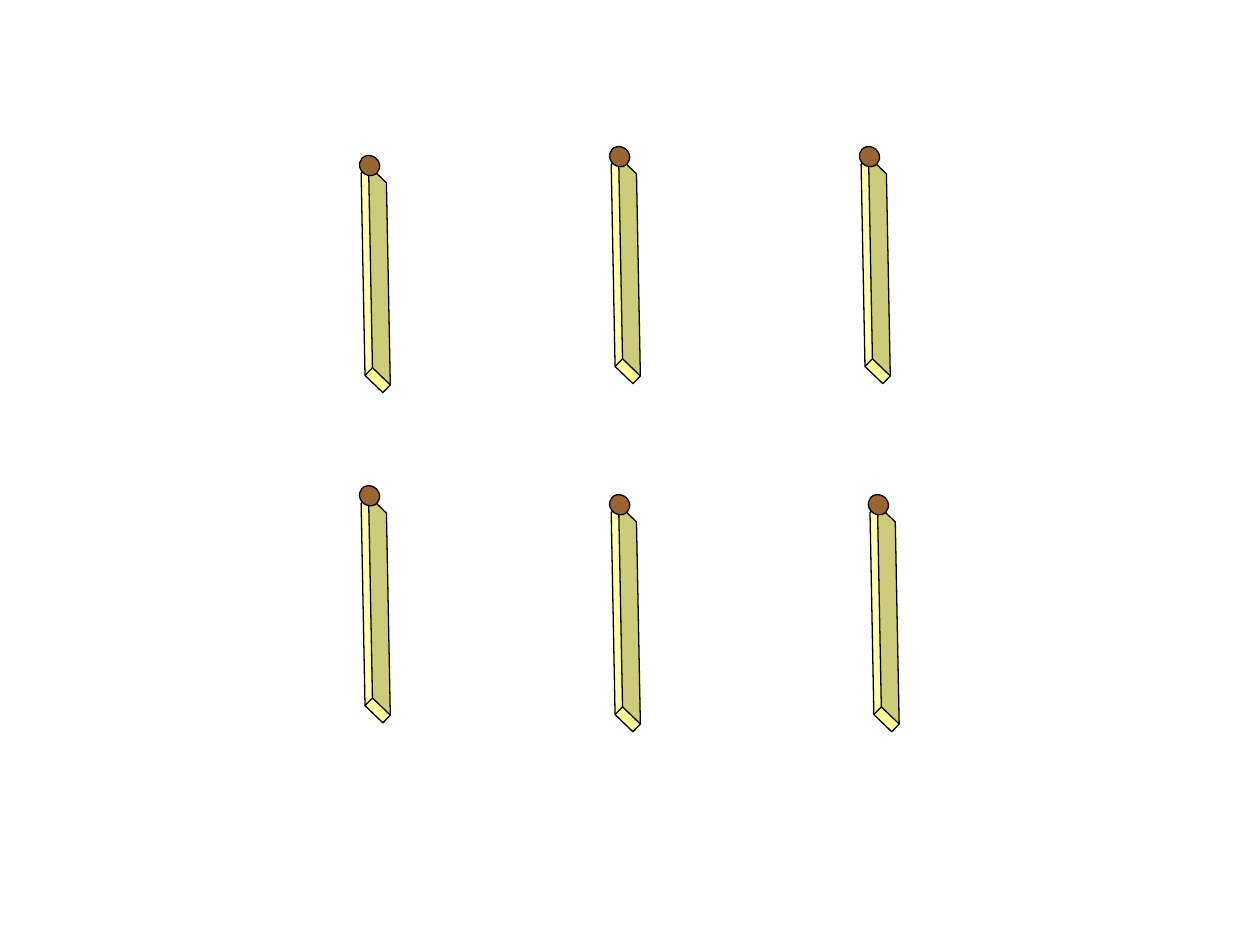
from dataclasses import dataclass

from pptx import Presentation
from pptx.dml.color import RGBColor
from pptx.enum.shapes import MSO_SHAPE
from pptx.util import Pt


@dataclass(frozen=True)
class Theme:
    wood: RGBColor = RGBColor(0xFF, 0xFF, 0x99)
    tip: RGBColor = RGBColor(0x99, 0x66, 0x33)
    outline: RGBColor = RGBColor(0, 0, 0)
    outline_width: float = 0.75


theme = Theme()
TILT = 313.9
STICK_WIDTH, STICK_HEIGHT = 87.8, 95.8
TIP_WIDTH, TIP_HEIGHT = 11, 12
TIP_DX, TIP_DY = 34.9, -23

matchsticks = [
    (170.8, 111.6), (313.7, 106.5), (456.5, 106.5),
    (170.8, 300.3), (313.7, 305.4), (461.6, 305.4),
]


def add_part(match, kind, left, top, width, height, color):
    part = match.shapes.add_shape(kind, Pt(left), Pt(top), Pt(width), Pt(height))
    part.rotation = TILT
    part.shadow.inherit = False
    part.fill.solid()
    part.fill.fore_color.rgb = color
    part.line.color.rgb = theme.outline
    part.line.width = Pt(theme.outline_width)
    return part


deck = Presentation()
deck.slide_width, deck.slide_height = Pt(720), Pt(540)
slide = deck.slides.add_slide(deck.slide_layouts[6])

for left, top in matchsticks:
    match = slide.shapes.add_group_shape()
    stick = add_part(match, MSO_SHAPE.CUBE, left, top,
                     STICK_WIDTH, STICK_HEIGHT, theme.wood)
    stick.adjustments[0] = 0.93
    add_part(match, MSO_SHAPE.OVAL, left + TIP_DX, top + TIP_DY,
             TIP_WIDTH, TIP_HEIGHT, theme.tip)

deck.save("out.pptx")
